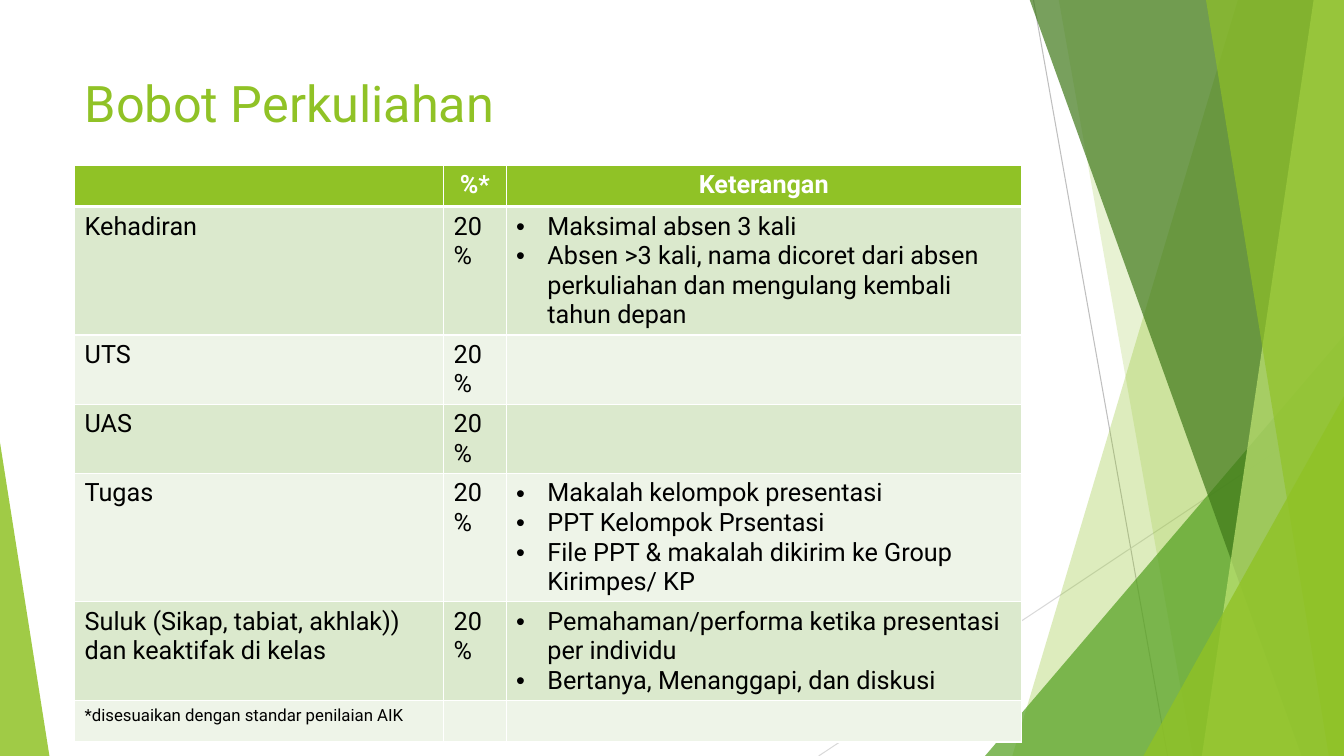
from dataclasses import dataclass
from lxml.etree import SubElement
from pptx import Presentation
from pptx.dml.color import RGBColor
from pptx.enum.shapes import MSO_CONNECTOR as LINE, MSO_SHAPE as SHAPE
from pptx.enum.text import MSO_ANCHOR as ANCHOR, MSO_AUTO_SIZE as AUTOSIZE, PP_ALIGN as ALIGN
from pptx.oxml.ns import qn
from pptx.util import Inches, Pt

# Content
TITLE = "Bobot Perkuliahan"
HEADER = ["", "%*", "Keterangan"]
WEIGHTS = [  # component, weight, bulleted remarks
    ("Kehadiran", "20%", [
        "Maksimal absen 3 kali",
        "Absen >3 kali, nama dicoret dari absen perkuliahan dan mengulang kembali tahun depan"]),
    ("UTS", "20%", []),
    ("UAS", "20%", []),
    ("Tugas", "20%", [
        "Makalah kelompok presentasi",
        "PPT Kelompok Prsentasi",
        "File PPT & makalah dikirim ke Group Kirimpes/ KP"]),
    ("Suluk (Sikap, tabiat, akhlak)) dan keaktifak di kelas", "20%", [
        "Pemahaman/performa ketika presentasi per individu",
        "Bertanya, Menanggapi, dan diskusi"]),
]
FOOTNOTE = "*disesuaikan dengan standar penilaian AIK"


@dataclass(frozen=True)
class Theme:
    font: str = "Roboto"
    green: str = "90C226"
    forest: str = "54A021"
    moss: str = "3F7819"
    lime: str = "C0E474"
    row_dark: str = "DBE9CD"
    row_light: str = "EEF4E8"
    white: str = "FFFFFF"
    black: str = "000000"
    title_size: int = 36
    body_size: int = 18
    note_size: int = 12


T = Theme()
WIDTH, HEIGHT = 13.33, 7.5
BAND_TOP = -0.01
COLUMNS = [3.66, 0.62, 5.11]
ROW_HEIGHT = 0.41
INDENT = 0.31

# Decoration, from back to front
RAYS = [((10.25, 0), (11.58, HEIGHT), "BFBFBF"), ((WIDTH, 4.03), (8.12, HEIGHT), "D9D9D9")]
FACETS = [  # bands: x at top, x at bottom; triangles: left, top, width, apex
    ("band", (12.28, 10.04), T.green, 30),
    ("band", (10.5, 11.83), T.green, 20),
    ("triangle", (9.77, 3.33, 3.56, 1), T.forest, 72),
    ("band", (10.21, 12.91), T.moss, 70),
    ("band", (13.03, 11.92), T.lime, 70),
    ("band", (11.96, 13.18), T.green, 65),
    ("triangle", (11.34, 3.93, 1.99, 1), T.green, 80),
    ("triangle", (0, 4.39, 0.49, 0), T.green, 85),
]


def rgb(color):
    return RGBColor.from_string(color)


def add_ray(s, start, end, color):
    ray = s.shapes.add_connector(LINE.STRAIGHT, *map(Inches, start + end))
    ray.line.color.rgb = rgb(color)
    ray.line.width = Pt(0.75)
    SubElement(ray._element.spPr, qn("a:effectLst"))


def add_facet(s, kind, geometry, color, opacity):
    if kind == "band":
        top_x, bottom_x = geometry
        corners = [(WIDTH, BAND_TOP), (WIDTH, HEIGHT), (bottom_x, HEIGHT)]
        outline = s.shapes.build_freeform(Inches(top_x), Inches(BAND_TOP))
        outline.add_line_segments([(Inches(x), Inches(y)) for x, y in corners], close=True)
        sp = outline.convert_to_shape()
    else:
        left, top, width, apex = geometry
        sp = s.shapes.add_shape(SHAPE.ISOSCELES_TRIANGLE,
                                *map(Inches, (left, top, width, HEIGHT - top)))
        sp.adjustments[0] = apex
    sp.shadow.inherit = False
    sp.line.fill.background()
    sp.fill.solid()
    sp.fill.fore_color.rgb = rgb(color)
    fill_color = sp._element.spPr.find(qn("a:solidFill"))[0]
    SubElement(fill_color, qn("a:alpha"), val=str(opacity * 1000))


def add_run(p, text, size, color, bold=False):
    r = p.add_run()
    r.text = text
    r.font.name, r.font.size, r.font.bold = T.font, Pt(size), bold
    r.font.color.rgb = rgb(color)


def add_bullet(p):
    pPr = p._p.get_or_add_pPr()
    pPr.set("marL", str(Inches(INDENT)))
    pPr.set("indent", str(-Inches(INDENT)))
    SubElement(pPr, qn("a:buFont"), typeface="Arial")
    SubElement(pPr, qn("a:buChar"), char="•")


def style_cell(cell, fill, top, bottom):
    tcPr = cell._tc.get_or_add_tcPr()
    for side, points in (("L", 1), ("R", 1), ("T", top), ("B", bottom)):
        ln = SubElement(tcPr, qn("a:ln" + side), w=str(Pt(points)))
        SubElement(SubElement(ln, qn("a:solidFill")), qn("a:srgbClr"), val=T.white)
    cell.fill.solid()
    cell.fill.fore_color.rgb = rgb(fill)


def fill_cell(cell, lines, size, color, header=False, bullets=False):
    tf = cell.text_frame
    for i, line in enumerate(lines):
        p = tf.add_paragraph() if i else tf.paragraphs[0]
        if bullets:
            add_bullet(p)
        if header:
            p.alignment = ALIGN.CENTER
        add_run(p, line, size, color, bold=header)


def add_weight_table(s):
    rows = [HEADER, *WEIGHTS, (FOOTNOTE, "", [])]
    frame = s.shapes.add_table(len(rows), len(COLUMNS), Inches(0.74), Inches(1.64),
                               Inches(sum(COLUMNS)), Inches(ROW_HEIGHT * len(rows)))
    table = frame.table
    for column, width in zip(table.columns, COLUMNS):
        column.width = Inches(width)
    for i, row in enumerate(rows):
        table.rows[i].height = Inches(ROW_HEIGHT)
        header = i == 0
        fill = T.green if header else T.row_dark if i % 2 else T.row_light
        size = T.note_size if row[0] == FOOTNOTE else T.body_size
        for j, content in enumerate(row):
            cell = table.cell(i, j)
            bullets = isinstance(content, list)
            lines = content if bullets else [content] if content else []
            style_cell(cell, fill, top=3 if i == 1 else 1, bottom=3 if header else 1)
            fill_cell(cell, lines, size, T.white if header else T.black, header, bullets)


def add_title(s):
    title = s.shapes.title
    title.left, title.top, title.width, title.height = map(Inches, (0.74, 0.67, 9.4, 1.44))
    tf = title.text_frame
    tf.word_wrap = True
    tf.auto_size = AUTOSIZE.NONE
    tf.vertical_anchor = ANCHOR.TOP
    p = tf.paragraphs[0]
    p.alignment = ALIGN.LEFT
    add_run(p, TITLE, T.title_size, T.green)


def main():
    prs = Presentation()
    prs.slide_width, prs.slide_height = Inches(WIDTH), Inches(HEIGHT)
    s = prs.slides.add_slide(prs.slide_layouts[5])
    for ray in RAYS:
        add_ray(s, *ray)
    for facet in FACETS:
        add_facet(s, *facet)
    add_title(s)
    add_weight_table(s)
    prs.save("out.pptx")


if __name__ == "__main__":
    main()
